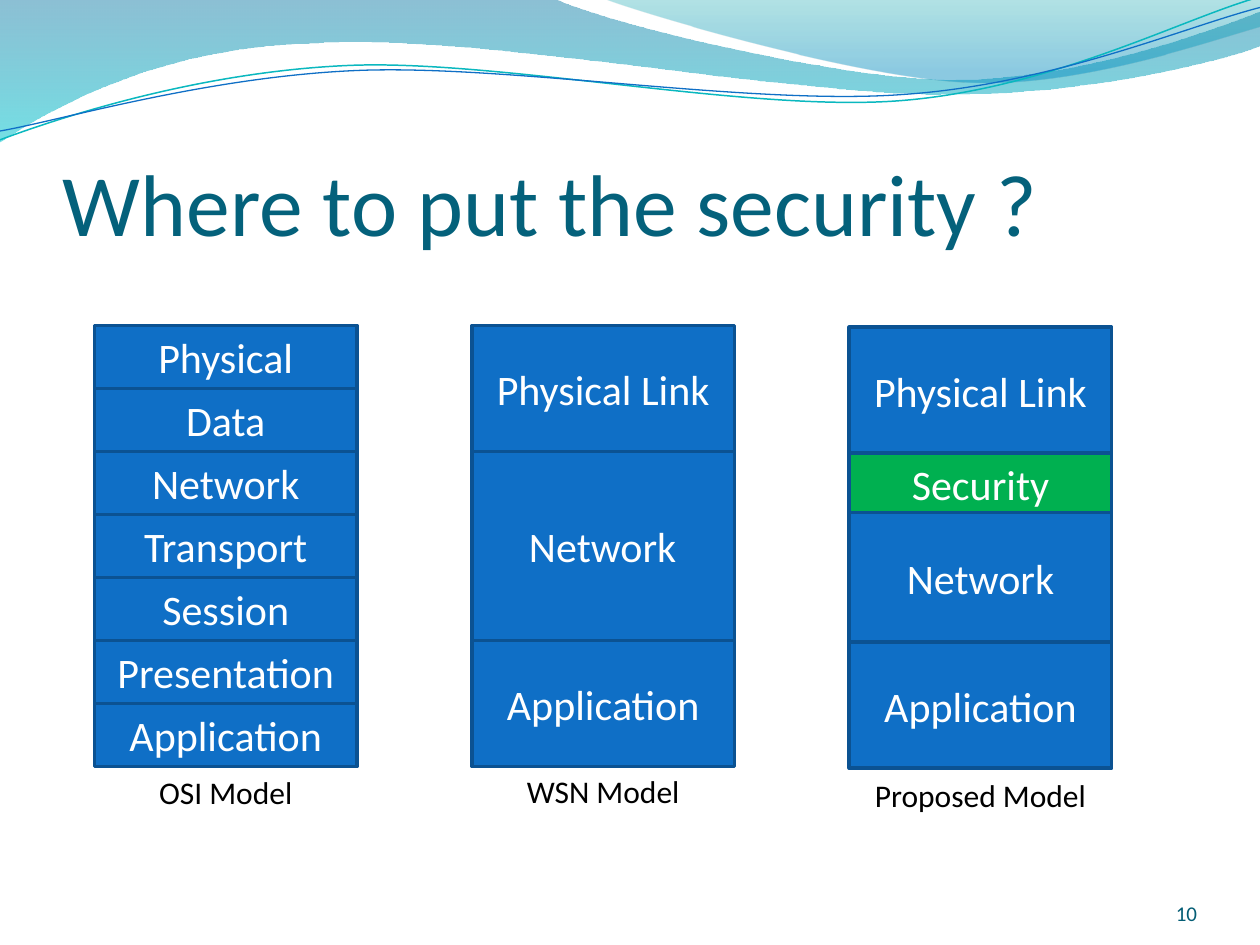
"""Build a slide comparing where security sits in three layer models."""
from math import cos, radians, sin

from lxml.etree import SubElement
from pptx import Presentation
from pptx.dml.color import RGBColor
from pptx.enum.shapes import MSO_SHAPE
from pptx.enum.text import MSO_ANCHOR, MSO_AUTO_SIZE, PP_ALIGN
from pptx.oxml.ns import qn
from pptx.util import Pt

TITLE = "Where to put the security ?"
PAGE_NUMBER = "10"
OSI_LAYERS = ["Physical", "Data", "Network", "Transport", "Session", "Presentation", "Application"]
MODELS = [
    {"caption": "OSI Model", "left": 54, "top": 186, "caption_top": 438.4,
     "layers": [(name, 36 * row, 36) for row, name in enumerate(OSI_LAYERS)]},
    {"caption": "WSN Model", "left": 269.7, "top": 186, "caption_top": 437.8,
     "layers": [("Physical Link", 0, 72), ("", 72, 108), ("Application", 180, 72)]},
    {"caption": "Proposed Model", "left": 485.3, "top": 187, "caption_top": 440,
     "layers": [("Security", 71.5, 36), ("Physical Link", 0, 72),
                ("Network", 106, 74), ("Application", 180, 72)]},
]
WSN_LABEL = ("Network", (295.2, 293.8, 99.2, 36))
WAVES = [
    {"start": (0, 0), "stops": [(0, "0074A1", 45), (1, "00C6CF", 55)], "segments": [
        (316.8, -0.7),
        (342.7, 12.2, 478.1, 45.4, 545.8, 45.4), (614.2, 45.4, 689.8, 18.7, 720, 6.5),
        (720.7, 25.9),
        (707.8, 31.7, 626.4, 54.7, 537.1, 54), (447.8, 54, 275, 20.2, 185, 24.5),
        (92.9, 25.9, 33.1, 59.8, -0.7, 81.4)]},
    {"start": (344.9, -0.7), "stops": [(0, "00A1A9", 30), (0.8, "008BBF", 45)], "segments": [
        (366.5, 7.9, 491, 44.6, 553.7, 46.8), (616.3, 49.7, 691.9, 23, 720, 15.1),
        (720, 0)]},
]
RIBBONS = [
    {"start": (0, 79.9), "center": (359.3, 41.4), "line": ("0AB8BF", 0.85), "segments": [
        (34.6, 67, 113.8, 41, 199.4, 37.4), (284.4, 33.8, 427, 64.1, 513.4, 57.6),
        (599.8, 51.1, 675.4, 10.8, 718.6, -1.4)]},
    {"start": (0, 74.9), "center": (359.6, 42.5), "line": ("0F6FC6", 0.75), "segments": [
        (33.8, 69.1, 118.1, 43.9, 203.8, 40.3), (290.2, 36.7, 429.8, 60.5, 516.2, 54),
        (601.9, 48.2, 677.5, 15.1, 720, 4.3)]},
]
THEME = {
    "font": "Calibri",
    "title": (50, "04617B"), "number": (12, "045D75"),
    "layer": (24, "FFFFFF"), "caption": (18, "000000"),
    "fill": "0F6FC6", "security": "00B050", "border": ("0B5292", 2),
}
LAYER_WIDTH, CAPTION_HEIGHT = 150, 29
RIBBON_TILT = -2.7
UNITS_PER_POINT = 100
BOTTOM = {"vertical_anchor": MSO_ANCHOR.BOTTOM,
          "margin_left": 0, "margin_right": 0, "margin_bottom": 0}
GROW = {"auto_size": MSO_AUTO_SIZE.SHAPE_TO_FIT_TEXT}


def set_format(target, values):
    for name, value in values.items():
        setattr(target, name, value)


def set_line(shape, line):
    color, width = line
    shape.line.color.rgb = RGBColor.from_string(color)
    shape.line.width = Pt(width)


def write(box, text, style, align, **frame_format):
    size, color = THEME[style]
    set_format(box.text_frame, {"word_wrap": True, **frame_format})
    para = box.text_frame.paragraphs[0]
    para.alignment = align
    span = para.add_run()
    span.text = text
    set_format(span.font, {"name": THEME["font"], "size": Pt(size)})
    span.font.color.rgb = RGBColor.from_string(color)


def add_text(page, area, *content, **frame_format):
    write(page.shapes.add_textbox(*map(Pt, area)), *content, **frame_format)


def rotate(point, center, degrees):
    angle = radians(degrees)
    dx, dy = point[0] - center[0], point[1] - center[1]
    return (center[0] + dx * cos(angle) - dy * sin(angle),
            center[1] + dx * sin(angle) + dy * cos(angle))


def control_points(curve):
    points = [curve["start"]]
    for segment in curve["segments"]:
        points.extend(zip(segment[::2], segment[1::2]))
    return points


def add_outline(page, points, segments, close):
    scaled = [(x * UNITS_PER_POINT, y * UNITS_PER_POINT) for x, y in points]
    builder = page.shapes.build_freeform(*scaled[0], scale=Pt(1) / UNITS_PER_POINT)
    builder.add_line_segments(scaled[1:], close=close)
    shape = builder.convert_to_shape()
    shape.shadow.inherit = False
    outline = next(shape._element.iter(qn("a:path")))
    steps = iter(outline.findall(qn("a:lnTo")))
    for segment in segments:
        group = [next(steps) for _ in range(len(segment) // 2)]
        if len(group) == 3:
            bend = SubElement(outline, qn("a:cubicBezTo"))
            group[0].addprevious(bend)
            for step in group:
                bend.append(step[0])
                outline.remove(step)
    return shape


def add_wave(page, wave):
    shape = add_outline(page, control_points(wave), wave["segments"], True)
    shape.line.fill.background()
    shape.fill.gradient()
    shape.fill.gradient_angle = 270
    for stop, (position, color, _) in zip(shape.fill.gradient_stops, wave["stops"]):
        stop.position = position
        stop.color.rgb = RGBColor.from_string(color)
    colors = shape._element.spPr.iter(qn("a:srgbClr"))
    for color, (_, _, opacity) in zip(colors, wave["stops"]):
        SubElement(color, qn("a:alpha")).set("val", str(opacity * 1000))


def add_ribbon(page, ribbon):
    level = [rotate(point, ribbon["center"], -RIBBON_TILT) for point in control_points(ribbon)]
    shape = add_outline(page, level, ribbon["segments"], False)
    shape.rotation = RIBBON_TILT
    shape.fill.background()
    set_line(shape, ribbon["line"])


def add_model(page, model):
    left, top = model["left"], model["top"]
    for name, offset, height in model["layers"]:
        area = (left, top + offset, LAYER_WIDTH, height)
        box = page.shapes.add_shape(MSO_SHAPE.RECTANGLE, *map(Pt, area))
        box.shadow.inherit = False
        box.fill.solid()
        color = THEME["security" if name == "Security" else "fill"]
        box.fill.fore_color.rgb = RGBColor.from_string(color)
        set_line(box, THEME["border"])
        if name:
            write(box, name, "layer", PP_ALIGN.CENTER, vertical_anchor=MSO_ANCHOR.MIDDLE)
    area = (left, model["caption_top"], LAYER_WIDTH, CAPTION_HEIGHT)
    add_text(page, area, model["caption"], "caption", PP_ALIGN.CENTER, **GROW)


def main():
    deck = Presentation()
    set_format(deck, {"slide_width": Pt(720), "slide_height": Pt(540)})
    page = deck.slides.add_slide(deck.slide_layouts[6])
    for wave in WAVES:
        add_wave(page, wave)
    for ribbon in RIBBONS:
        add_ribbon(page, ribbon)
    add_text(page, (36, 55.2, 648, 90), TITLE, "title", PP_ALIGN.LEFT, **BOTTOM)
    add_text(page, (624, 500.5, 60, 28.75), PAGE_NUMBER, "number", PP_ALIGN.RIGHT,
             margin_top=0, **BOTTOM)
    for model in MODELS:
        add_model(page, model)
    label, area = WSN_LABEL
    add_text(page, area, label, "layer", PP_ALIGN.LEFT, **{**GROW, "word_wrap": False})
    deck.save("out.pptx")


if __name__ == "__main__":
    main()
